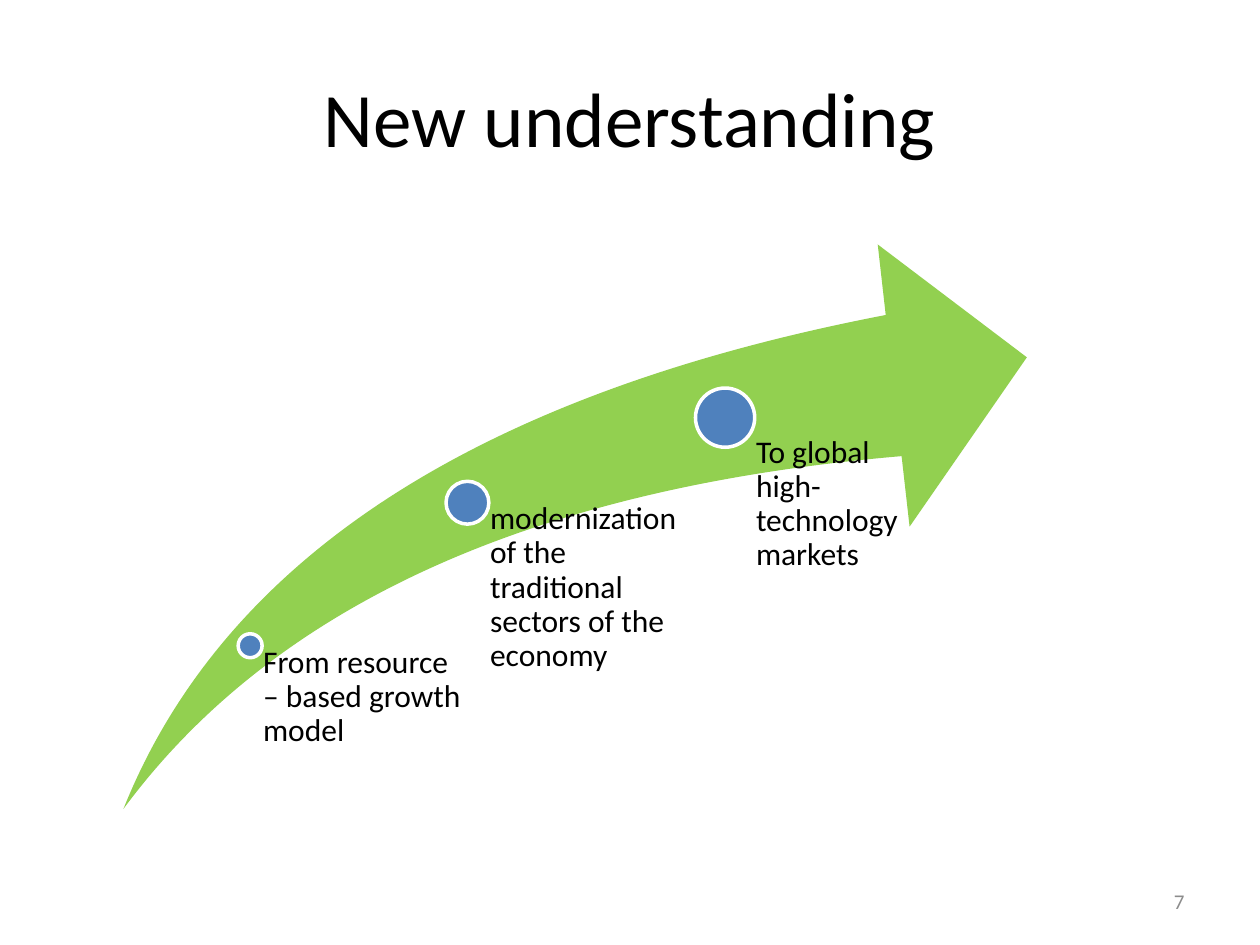
from pptx import Presentation
from pptx.dml.color import RGBColor
from pptx.enum.shapes import MSO_SHAPE as Shape
from pptx.enum.text import MSO_ANCHOR as Anchor, PP_ALIGN as Align
from pptx.util import Inches, Pt

GREEN, BLUE, WHITE, BLACK, GREY = "92D050", "4F81BD", "FFFFFF", "000000", "8C8C8C"

# Dot box, label box, label left inset, label
STAGES = [
    ((1.89, 5.03, 0.19, 0.19), (1.99, 5.13, 1.67, 1.29), 0.1,
     "From resource – based growth model"),
    ((3.54, 3.82, 0.34, 0.34), (3.71, 3.99, 1.72, 2.44), 0.18,
     "modernization of the traditional sectors of the economy"),
    ((5.52, 3.08, 0.47, 0.47), (5.75, 3.46, 1.72, 2.81), 0.25,
     "To global high-technology markets"),
]


def color(value):
    return RGBColor.from_string(value)


def inches(box):
    return [Inches(length) for length in box]


def add_text(shapes, box, text, size, ink=BLACK, frame_format=None, para_format=None):
    frame = shapes.add_textbox(*inches(box)).text_frame
    for name, value in {"word_wrap": True, **(frame_format or {})}.items():
        setattr(frame, name, value)
    para = frame.paragraphs[0]
    for name, value in (para_format or {}).items():
        setattr(para, name, value)
    span = para.add_run()
    span.text = text
    for name, value in {"size": Pt(size), "name": "Calibri"}.items():
        setattr(span.font, name, value)
    span.font.color.rgb = color(ink)


def add_filled(shapes, kind, box, fill):
    shape = shapes.add_shape(kind, *inches(box))
    shape.shadow.inherit = False
    shape.fill.solid()
    shape.fill.fore_color.rgb = color(fill)
    shape.line.fill.background()
    return shape


def add_stage(shapes, dot_box, label_box, inset, label):
    dot = add_filled(shapes, Shape.OVAL, dot_box, BLUE)
    dot.line.color.rgb = color(WHITE)
    dot.line.width = Pt(2)
    margins = {"margin_left": Inches(inset), "margin_top": 0,
               "margin_right": 0, "margin_bottom": 0}
    add_text(shapes, label_box, label, 18, frame_format=margins,
             para_format={"line_spacing": 0.9})


def add_growth_path(page, box):
    shapes = page.shapes.add_group_shape().shapes
    arrow = add_filled(shapes, Shape.SWOOSH_ARROW, box, GREEN)
    for index in range(2):
        arrow.adjustments[index] = 0.25
    for stage in STAGES:
        add_stage(shapes, *stage)


def main():
    deck = Presentation()
    deck.slide_width, deck.slide_height = Inches(10), Inches(7.5)
    page = deck.slides.add_slide(deck.slide_layouts[6])
    middle = {"vertical_anchor": Anchor.MIDDLE}
    add_text(page.shapes, (0.5, 0.3, 9, 1.25), "New understanding", 44,
             frame_format=middle, para_format={"alignment": Align.CENTER})
    add_text(page.shapes, (7.17, 6.95, 2.33, 0.4), "7", 12, GREY,
             frame_format=middle, para_format={"alignment": Align.RIGHT})
    add_growth_path(page, (0.98, 1.94, 7.17, 4.48))
    deck.save("out.pptx")


if __name__ == "__main__":
    main()
